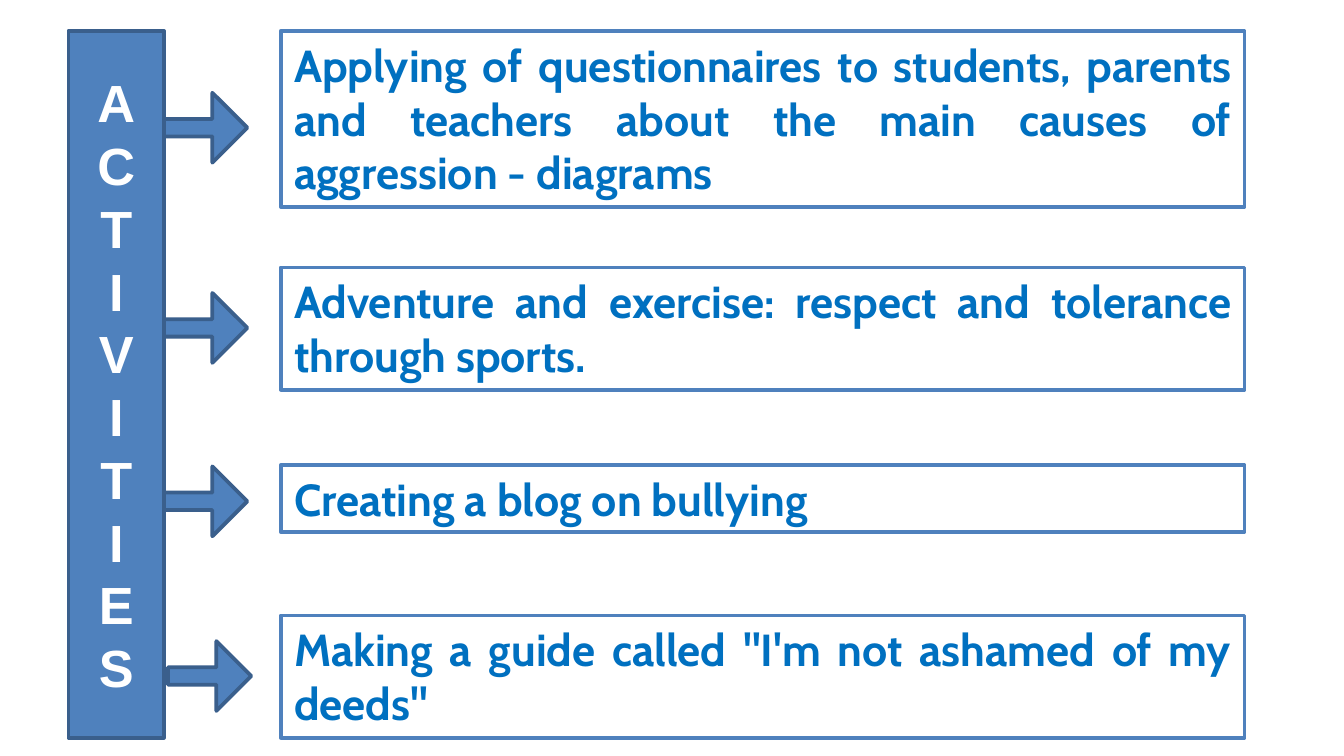
from pptx import Presentation
from pptx.dml.color import RGBColor
from pptx.enum.shapes import MSO_SHAPE as Shape
from pptx.enum.text import MSO_ANCHOR as Anchor, MSO_AUTO_SIZE as AutoSize, PP_ALIGN as Align
from pptx.oxml.ns import qn
from pptx.util import Inches, Pt

WHITE = RGBColor(0xFF, 0xFF, 0xFF)
BLUE = RGBColor(0x4F, 0x81, 0xBD)
DARK_BLUE = RGBColor(0x3A, 0x5F, 0x8C)
TEXT_BLUE = RGBColor(0x00, 0x70, 0xC0)

# Box top, box height, arrow left, arrow top, alignment, text
ACTIVITIES = [
    (0.23, 1.31, 1.22, 0.69, Align.JUSTIFY,
     "Applying of questionnaires to students, parents and teachers "
     "about the main causes of aggression - diagrams"),
    (1.99, 0.91, 1.22, 2.18, Align.JUSTIFY,
     "Adventure and exercise: respect and tolerance through sports."),
    (3.46, 0.5, 1.22, 3.47, Align.LEFT, "Creating a blog on bullying"),
    (4.58, 0.91, 1.25, 4.77, Align.JUSTIFY,
     "Making a guide called \"I'm not ashamed of my deeds\""),
]

presentation = Presentation()
presentation.slide_width = Inches(10)
presentation.slide_height = Inches(10 * 9 / 16)
slide = presentation.slides.add_slide(presentation.slide_layouts[6])


def add_outlined_shape(kind, left, top, width, height, fill, line):
    shape = slide.shapes.add_shape(
        kind, Inches(left), Inches(top), Inches(width), Inches(height))
    shape.shadow.inherit = False
    shape.fill.solid()
    shape.fill.fore_color.rgb = fill
    shape.line.color.rgb = line
    shape.line.width = Pt(2)
    return shape


def add_bold_text(shape, text, alignment, font_name, size, color):
    frame = shape.text_frame
    frame.word_wrap = True
    frame.auto_size = AutoSize.SHAPE_TO_FIT_TEXT
    paragraph = frame.paragraphs[0]
    paragraph.alignment = alignment
    run = paragraph.add_run()
    run.text = text
    run.font.name = font_name
    run.font.size = Pt(size)
    run.font.bold = True
    run.font.color.rgb = color


# Activity boxes
for box_top, box_height, _, _, alignment, text in ACTIVITIES:
    box = add_outlined_shape(
        Shape.RECTANGLE, 2.09, box_top, 7.17, box_height, WHITE, BLUE)
    box.text_frame.vertical_anchor = Anchor.TOP
    add_bold_text(box, text, alignment, "Cabin", 24, TEXT_BLUE)

# Banner with stacked letters
banner = add_outlined_shape(Shape.RECTANGLE, 0.51, 0.23, 0.71, 5.26, BLUE, DARK_BLUE)
banner.text_frame.vertical_anchor = Anchor.MIDDLE
add_bold_text(banner, "ACTIVITIES", Align.CENTER, "Arial", 28, WHITE)
banner.element.txBody.find(qn("a:bodyPr")).set("vert", "wordArtVert")

# Arrows from the banner to the boxes
for _, _, arrow_left, arrow_top, _, _ in ACTIVITIES:
    arrow = add_outlined_shape(
        Shape.RIGHT_ARROW, arrow_left, arrow_top, 0.62, 0.52, BLUE, DARK_BLUE)
    arrow.adjustments[0] = 0.25
    arrow.adjustments[1] = 0.5

presentation.save("out.pptx")
